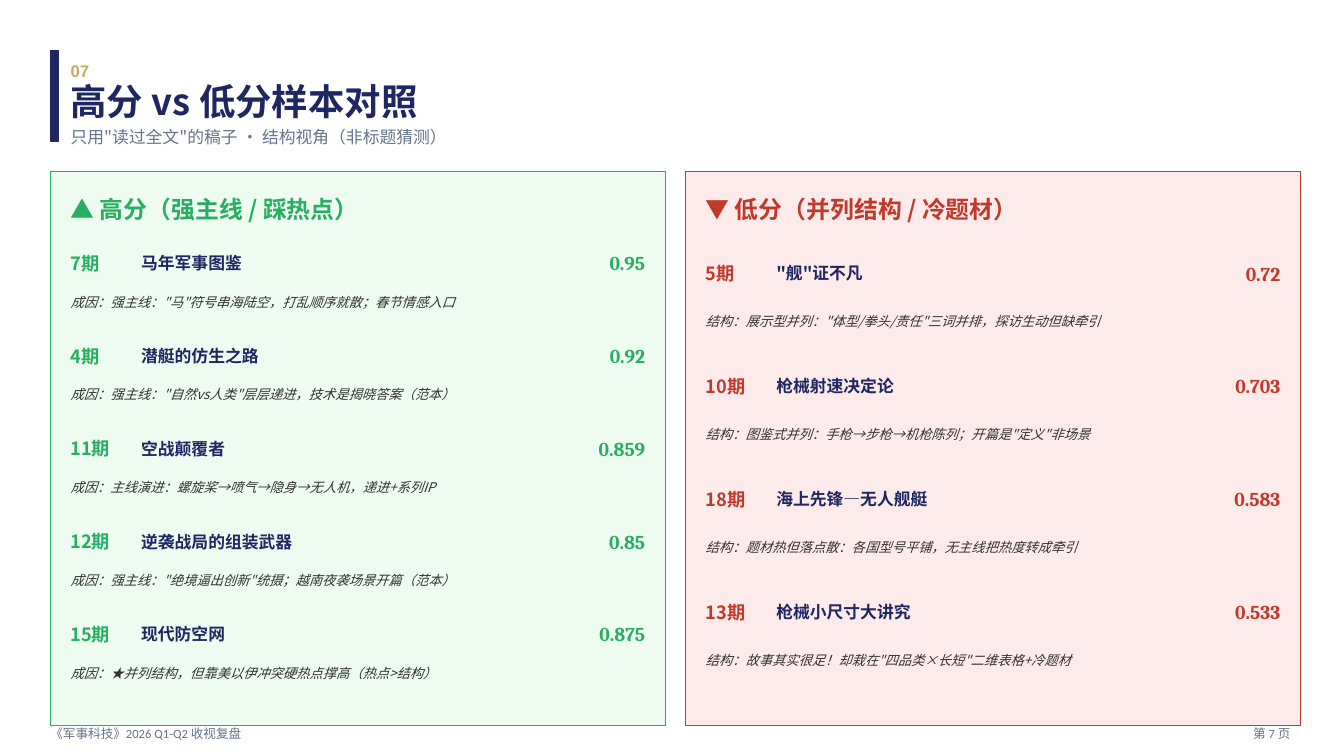
from dataclasses import dataclass

from lxml.etree import SubElement
from pptx import Presentation
from pptx.dml.color import RGBColor
from pptx.enum.shapes import MSO_SHAPE
from pptx.enum.text import MSO_ANCHOR, MSO_AUTO_SIZE, PP_ALIGN
from pptx.oxml.ns import qn
from pptx.util import Inches, Pt

NAVY = RGBColor(0x1E, 0x27, 0x61)
GOLD = RGBColor(0xC9, 0xA9, 0x61)
SLATE = RGBColor(0x64, 0x74, 0x8B)
CHARCOAL = RGBColor(0x33, 0x33, 0x33)
GREEN = RGBColor(0x27, 0xAE, 0x60)
PALE_GREEN = RGBColor(0xED, 0xFB, 0xF1)
RED = RGBColor(0xC0, 0x39, 0x2B)
PALE_RED = RGBColor(0xFD, 0xEA, 0xEA)

HEADING_FONT = "Noto Sans CJK SC"
FOOTER_FONT = "Calibri"
SCORE_FONT = "Cambria"
NUMBER_FONT = "Arial"

MARGIN = 0.5
PADDING = 0.2
PANEL_TOP, PANEL_WIDTH, PANEL_HEIGHT, PANEL_GAP = 1.7, 6.1, 5.5, 0.2
ISSUE_WIDTH, SCORE_WIDTH, LINE_HEIGHT = 0.7, 1.3, 0.32


@dataclass
class Panel:
    heading: str
    accent: RGBColor
    fill: RGBColor
    first_row: float
    row_pitch: float
    reason_offset: float
    reason_height: float
    samples: list


HIGH = Panel("▲ 高分（强主线 / 踩热点）", GREEN, PALE_GREEN, 0.75, 0.92, 0.32, 0.45, [
    ("7期", "马年军事图鉴", "0.95",
     '成因：强主线："马"符号串海陆空，打乱顺序就散；春节情感入口'),
    ("4期", "潜艇的仿生之路", "0.92",
     '成因：强主线："自然vs人类"层层递进，技术是揭晓答案（范本）'),
    ("11期", "空战颠覆者", "0.859",
     "成因：主线演进：螺旋桨→喷气→隐身→无人机，递进+系列IP"),
    ("12期", "逆袭战局的组装武器", "0.85",
     '成因：强主线："绝境逼出创新"统摄；越南夜袭场景开篇（范本）'),
    ("15期", "现代防空网", "0.875",
     "成因：★并列结构，但靠美以伊冲突硬热点撑高（热点>结构）"),
])
LOW = Panel("▼ 低分（并列结构 / 冷题材）", RED, PALE_RED, 0.85, 1.12, 0.34, 0.6, [
    ("5期", '"舰"证不凡', "0.72",
     '结构：展示型并列："体型/拳头/责任"三词并排，探访生动但缺牵引'),
    ("10期", "枪械射速决定论", "0.703",
     '结构：图鉴式并列：手枪→步枪→机枪陈列；开篇是"定义"非场景'),
    ("18期", "海上先锋—无人舰艇", "0.583",
     "结构：题材热但落点散：各国型号平铺，无主线把热度转成牵引"),
    ("13期", "枪械小尺寸大讲究", "0.533",
     '结构：故事其实很足！却栽在"四品类×长短"二维表格+冷题材'),
])


def write(box, text, size, color, font=HEADING_FONT, bold=False, italic=False,
          align=PP_ALIGN.LEFT):
    """Fill a text shape with one styled run, without insets."""
    frame = box.text_frame
    frame.word_wrap = True
    frame.auto_size = MSO_AUTO_SIZE.NONE
    frame.vertical_anchor = MSO_ANCHOR.MIDDLE
    frame.margin_left = frame.margin_right = frame.margin_top = frame.margin_bottom = 0
    para = frame.paragraphs[0]
    para.alignment = align
    span = para.add_run()
    span.text = text
    span.font.name = font
    span.font.size = Pt(size)
    span.font.bold = bold
    span.font.italic = italic
    span.font.color.rgb = color
    # East Asian glyphs take their typeface from a separate element
    SubElement(span.font._element, qn("a:ea"), typeface=font)


def add_text(page, left, top, width, height, *content, **style):
    box = page.shapes.add_textbox(Inches(left), Inches(top), Inches(width), Inches(height))
    write(box, *content, **style)


def add_rectangle(page, left, top, width, height, fill, line):
    box = page.shapes.add_shape(MSO_SHAPE.RECTANGLE, Inches(left), Inches(top),
                                Inches(width), Inches(height))
    box.shadow.inherit = False
    box.fill.solid()
    box.fill.fore_color.rgb = fill
    box.line.color.rgb = line
    box.line.width = Pt(1)


def add_header(page, left, top):
    add_rectangle(page, left, top, 0.08, 0.9, NAVY, NAVY)
    text_left = left + PADDING
    add_text(page, text_left, top - 0.05, 0.7, 0.5, "07", 12, GOLD,
             font=NUMBER_FONT, bold=True)
    title = page.shapes.title
    title.left, title.top = Inches(text_left), Inches(top + 0.2)
    title.width, title.height = Inches(11), Inches(0.6)
    write(title, "高分 vs 低分样本对照", 26, NAVY, bold=True)
    add_text(page, text_left, top + 0.68, 12, 0.35,
             '只用"读过全文"的稿子 · 结构视角（非标题猜测）', 12, SLATE)


def add_sample(page, left, top, width, panel, sample):
    issue, name, score, reason = sample
    name_width = width - ISSUE_WIDTH - SCORE_WIDTH
    add_text(page, left, top, ISSUE_WIDTH, LINE_HEIGHT, issue, 13, panel.accent, bold=True)
    add_text(page, left + ISSUE_WIDTH, top, name_width, LINE_HEIGHT, name, 12, NAVY,
             bold=True)
    add_text(page, left + width - SCORE_WIDTH, top, SCORE_WIDTH, LINE_HEIGHT, score, 14,
             panel.accent, font=SCORE_FONT, bold=True, align=PP_ALIGN.RIGHT)
    add_text(page, left, top + panel.reason_offset, width, panel.reason_height, reason,
             9.5, CHARCOAL, italic=True)


def add_panel(page, left, top, width, height, panel):
    add_rectangle(page, left, top, width, height, panel.fill, panel.accent)
    inner_left, inner_width = left + PADDING, width - 2 * PADDING
    add_text(page, inner_left, top + 0.15, inner_width, 0.45, panel.heading, 17,
             panel.accent, bold=True)
    for row, sample in enumerate(panel.samples):
        row_top = top + panel.first_row + row * panel.row_pitch
        add_sample(page, inner_left, row_top, inner_width, panel, sample)


def add_footer(page, left, top, right):
    add_text(page, left, top, 6, 0.25, "《军事科技》2026 Q1-Q2 收视复盘", 9, SLATE,
             font=FOOTER_FONT)
    add_text(page, right - 1, top, 1, 0.25, "第 7 页", 9, SLATE, font=FOOTER_FONT,
             align=PP_ALIGN.RIGHT)


def main():
    deck = Presentation()
    deck.slide_width, deck.slide_height = Inches(13.33), Inches(7.5)
    page = deck.slides.add_slide(deck.slide_layouts[5])
    add_header(page, MARGIN, MARGIN)
    add_footer(page, MARGIN, 7.15, 12.8)
    for column, panel in enumerate((HIGH, LOW)):
        left = MARGIN + column * (PANEL_WIDTH + PANEL_GAP)
        add_panel(page, left, PANEL_TOP, PANEL_WIDTH, PANEL_HEIGHT, panel)
    deck.save("out.pptx")


if __name__ == "__main__":
    main()
